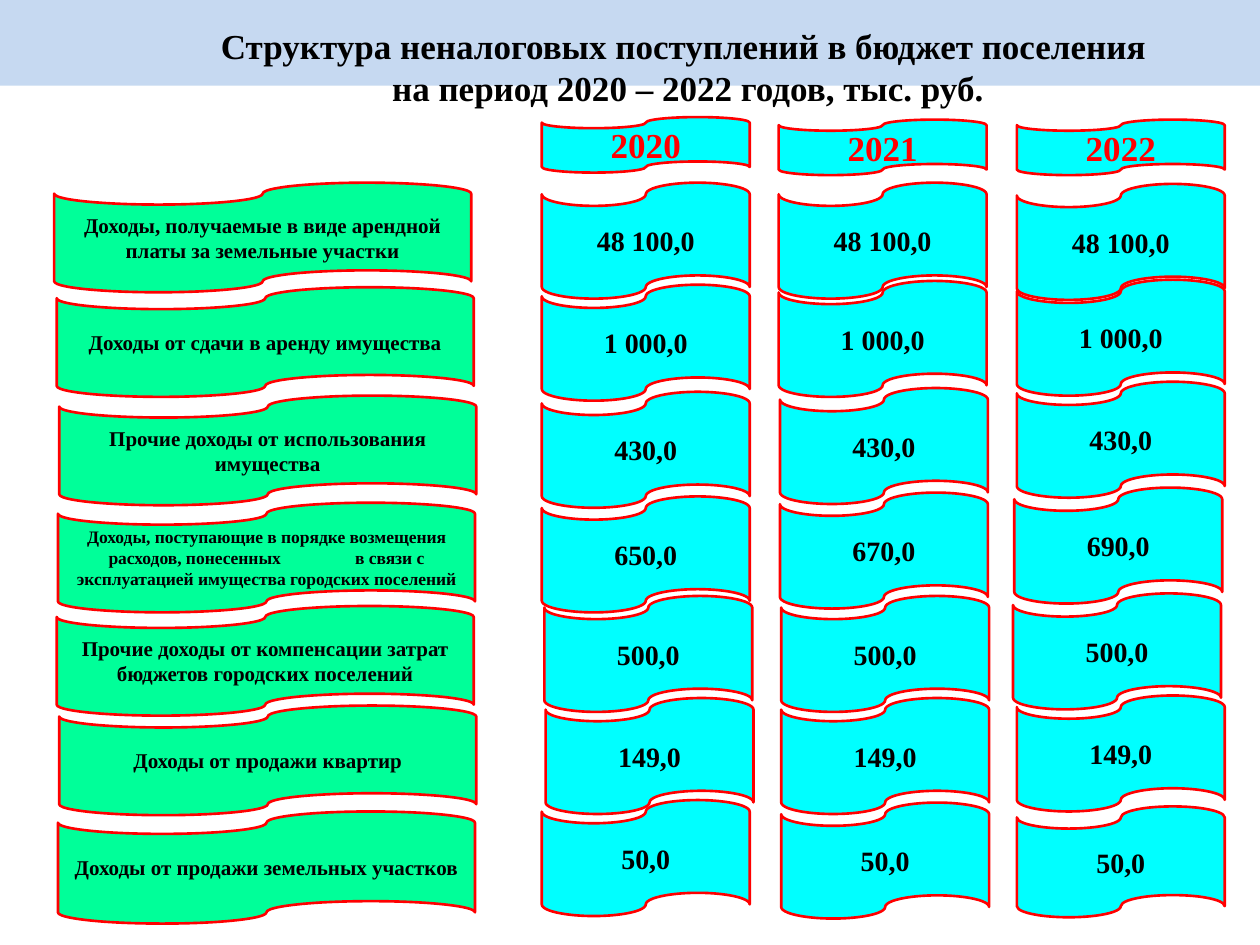
import pptx
import pptx.util
import pptx.dml.color
import pptx.enum.shapes
import pptx.enum.text

PX = pptx.util.Inches(1) // 100
FONT = "Times New Roman"
BLACK = pptx.dml.color.RGBColor(0x00, 0x00, 0x00)
RED = pptx.dml.color.RGBColor(0xFF, 0x00, 0x00)
GREEN = pptx.dml.color.RGBColor(0x00, 0xFF, 0x99)
CYAN = pptx.dml.color.RGBColor(0x00, 0xFF, 0xFF)
PALE_BLUE = pptx.dml.color.RGBColor(0xC6, 0xD9, 0xF1)
SHAPES = pptx.enum.shapes.MSO_SHAPE
GAP = "\t"

TITLE = "Структура неналоговых поступлений в бюджет поселения \vна период 2020 – 2022 годов, тыс. руб."

SOURCES = [
    (0, 0, 87, 12, "Доходы, получаемые в виде арендной платы за земельные участки"),
    (2, 83, 87, 12, "Доходы от сдачи в аренду имущества"),
    (4, 169, 87, 12, "Прочие доходы от использования имущества"),
    (3, 254, 87, 10, "Доходы, поступающие в порядке возмещения расходов, понесенных"
                     + GAP + "в связи с эксплуатацией имущества городских поселений"),
    (2, 336, 87, 12, "Прочие доходы от компенсации затрат бюджетов городских поселений"),
    (4, 415, 87, 12, "Доходы от продажи квартир"),
    (3, 499, 89, 12, "Доходы от продажи земельных участков"),
]

YEARS = [
    (430, 93, "2020", [
        (0, 52, 92, "48 100,0"), (0, 133, 92, "1 000,0"), (0, 218, 92, "430,0"),
        (0, 301, 92, "650,0"), (2, 380, 92, "500,0"), (3, 461, 92, "149,0"),
        (0, 542, 92, "50,0")]),
    (618, 95, "2021", [
        (0, 50, 92, "48 100,0"), (0, 128, 92, "1 000,0"), (1, 213, 92, "430,0"),
        (1, 296, 92, "670,0"), (2, 378, 92, "500,0"), (2, 459, 92, "149,0"),
        (2, 542, 92, "50,0")]),
    (807, 95, "2022", [
        (0, 51, 92, "48 100,0"), (0, 127, 92, "1 000,0"), (0, 208, 92, "430,0"),
        (-2, 292, 92, "690,0"), (-3, 376, 92, "500,0"), (0, 457, 92, "149,0"),
        (0, 545, 88, "50,0")]),
]


def emu(*lengths):
    return [length * PX for length in lengths]


def style_text(para, size, color):
    para.alignment = pptx.enum.text.PP_ALIGN.CENTER
    for span in para.runs:
        span.font.name = FONT
        span.font.size = pptx.util.Pt(size)
        span.font.bold = True
        span.font.color.rgb = color


def add_heading(page, left, top, width, height):
    band = page.shapes.add_shape(SHAPES.RECTANGLE, *emu(0, 0, 1000, 68))
    band.shadow.inherit = False
    band.fill.solid()
    band.fill.fore_color.rgb = PALE_BLUE
    band.line.fill.background()
    title = page.shapes.title
    title._element.addprevious(band._element)
    title.left, title.top, title.width, title.height = emu(left, top, width, height)
    frame = title.text_frame
    frame.word_wrap = True
    frame.auto_size = pptx.enum.text.MSO_AUTO_SIZE.NONE
    frame.vertical_anchor = pptx.enum.text.MSO_ANCHOR.MIDDLE
    para = frame.paragraphs[0]
    para.text = TITLE
    style_text(para, 20, BLACK)


def add_tape(page, left, top, width, height, text, size, fill, color=BLACK):
    tape = page.shapes.add_shape(SHAPES.FLOWCHART_PUNCHED_TAPE, *emu(left, top, width, height))
    tape.shadow.inherit = False
    tape.fill.solid()
    tape.fill.fore_color.rgb = fill
    tape.line.color.rgb = RED
    tape.line.width = pptx.util.Pt(1.5)
    frame = tape.text_frame
    frame.word_wrap = True
    frame.vertical_anchor = pptx.enum.text.MSO_ANCHOR.MIDDLE
    para = frame.paragraphs[0]
    before, gap, after = text.partition(GAP)
    para.text = before
    if gap:
        wide_space = para.add_run()
        wide_space.text = " "
        wide_space._r.get_or_add_rPr().set("spc", "4000")
        para.add_run().text = after
    style_text(para, size, color)


def add_sources(page, left, top, width):
    for shift, drop, height, size, text in SOURCES:
        add_tape(page, left + shift, top + drop, width, height, text, size, GREEN)


def add_year(page, left, top, width, year, amounts):
    for shift, drop, height, amount in amounts:
        add_tape(page, left + shift, top + drop, width, height, amount, 16, CYAN)
    add_tape(page, left, top, width, 44, year, 20, CYAN, RED)


def main():
    deck = pptx.Presentation()
    deck.slide_width, deck.slide_height = emu(1000, 750)
    page = deck.slides.add_slide(deck.slide_layouts.get_by_name("Title Only"))
    add_heading(page, 96, 14, 900, 78)
    add_sources(page, 43, 145, 331)
    for left, top, year, amounts in YEARS:
        add_year(page, left, top, 165, year, amounts)
    deck.save("out.pptx")


if __name__ == "__main__":
    main()
